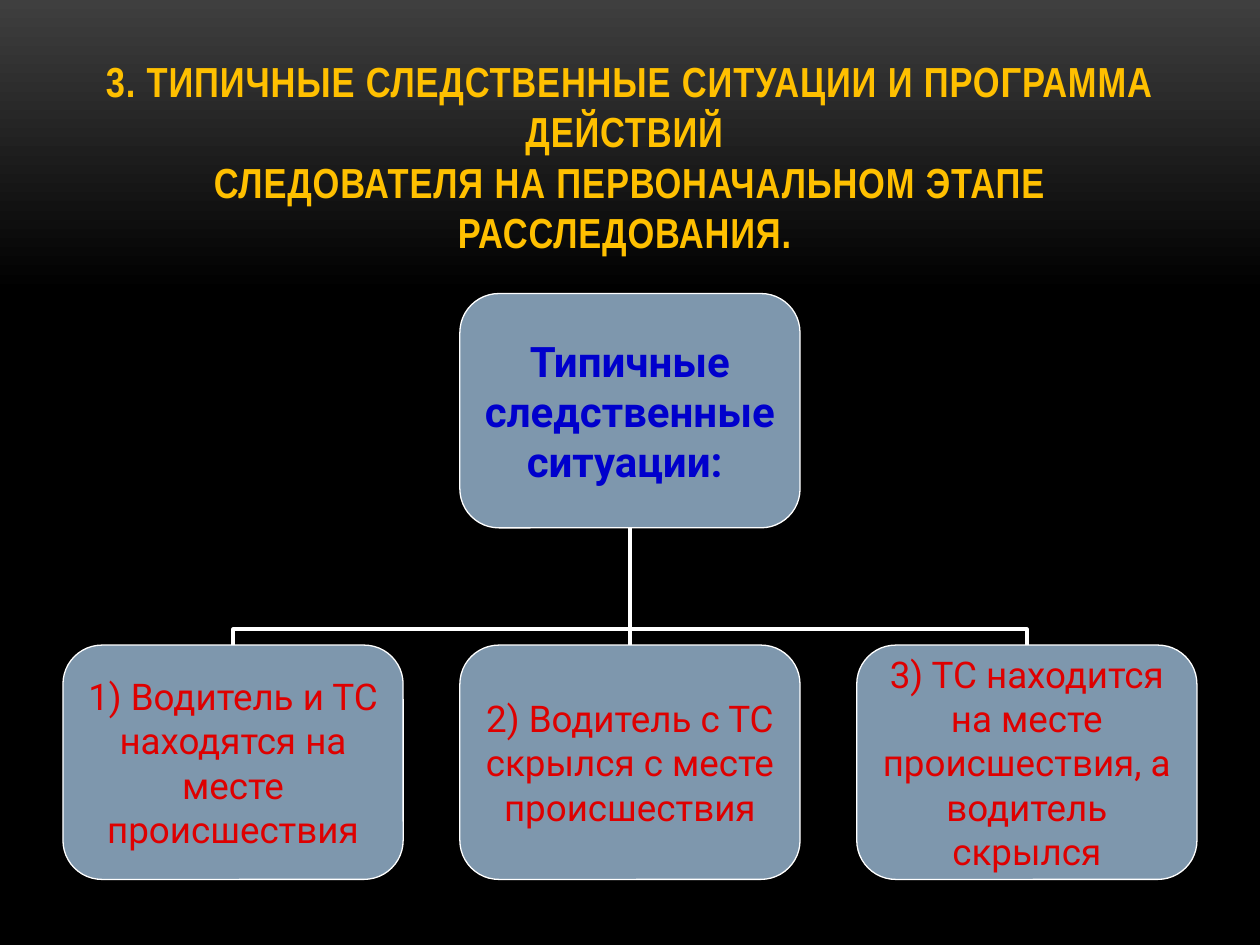
import copy

import pptx
import pptx.dml.color
import pptx.enum.shapes
import pptx.enum.text
import pptx.util
from pptx.oxml.ns import qn
from pptx.util import Inches

WHITE = "FFFFFF"
BOX_W, BOX_H = 2.7, 1.86
TITLE = ("3. ТИПИЧНЫЕ СЛЕДСТВЕННЫЕ СИТУАЦИИ И ПРОГРАММА ДЕЙСТВИЙ \v"
         "СЛЕДОВАТЕЛЯ НА ПЕРВОНАЧАЛЬНОМ ЭТАПЕ РАССЛЕДОВАНИЯ. ")
HEADING = "Типичные следственные ситуации: "
SITUATIONS = [
    "1) Водитель и ТС находятся на месте происшествия",
    "2) Водитель с ТС скрылся с месте происшествия",
    "3) ТС находится на месте происшествия, а водитель скрылся",
]


def rgb(value):
    return pptx.dml.color.RGBColor.from_string(value)


def paint_background(slide):
    fill = slide.background.fill
    fill.gradient()
    fill.gradient_angle = 270
    for stop, (position, color) in zip(fill.gradient_stops, [(0, "3F3F3F"), (0.31, "000000")]):
        stop.position = position
        stop.color.rgb = rgb(color)
    stops = next(slide.element.iter(qn("a:gsLst")))
    last = copy.deepcopy(stops[-1])
    last.set("pos", "100000")
    stops.append(last)


def write(shape, text, size, font, color, bold, anchor):
    frame = shape.text_frame
    frame.word_wrap = True
    frame.vertical_anchor = anchor
    frame.text = text
    paragraph = frame.paragraphs[0]
    paragraph.alignment = pptx.enum.text.PP_ALIGN.CENTER
    for run in paragraph.runs:
        run.font.size = pptx.util.Pt(size)
        run.font.name = font
        run.font.bold = bold
        run.font.color.rgb = rgb(color)
    return paragraph


def add_title(slide, left, top, width, height):
    title = slide.shapes.add_textbox(Inches(left), Inches(top), Inches(width), Inches(height))
    paragraph = write(title, TITLE, 24, "Arial Narrow", "FFC000", True,
                      pptx.enum.text.MSO_ANCHOR.BOTTOM)
    for run in paragraph.runs:
        run.font._element.set("spc", "50")


def add_box(slide, left, top, text, size, color, bold):
    box = slide.shapes.add_shape(pptx.enum.shapes.MSO_SHAPE.ROUNDED_RECTANGLE,
                                 Inches(left), Inches(top), Inches(BOX_W), Inches(BOX_H))
    box.shadow.inherit = False
    box.fill.solid()
    box.fill.fore_color.rgb = rgb("7E97AD")
    box.line.color.rgb = rgb(WHITE)
    box.line.width = pptx.util.Pt(0.75)
    frame = box.text_frame
    frame.margin_left = frame.margin_top = frame.margin_right = frame.margin_bottom = 0
    write(box, text, size, "Roboto", color, bold, pptx.enum.text.MSO_ANCHOR.MIDDLE)
    return box


def add_link(slide, kind, x1, y1, x2, y2):
    link = slide.shapes.add_connector(kind, Inches(x1), Inches(y1), Inches(x2), Inches(y2))
    link.line.color.rgb = rgb(WHITE)
    link.line.width = pptx.util.Pt(2.25)
    link._element.spPr.append(link._element.makeelement(qn("a:effectLst"), {}))
    return link


def add_branch(slide, child_x, child_y, parent_x, parent_y):
    """Elbow that leaves the child upwards: a horizontal elbow turned a quarter."""
    mid_x, mid_y = (child_x + parent_x) / 2, (child_y + parent_y) / 2
    half_w, half_h = (child_y - parent_y) / 2, abs(child_x - parent_x) / 2
    side = 1 if child_x > parent_x else -1
    link = add_link(slide, pptx.enum.shapes.MSO_CONNECTOR.ELBOW,
                    mid_x + side * half_w, mid_y - half_h,
                    mid_x - side * half_w, mid_y + half_h)
    properties = link._element.spPr
    properties.find(qn("a:xfrm")).set("rot", str((90 if side > 0 else 270) * 60000))
    geometry = properties.find(qn("a:prstGeom"))
    adjustments = geometry.find(qn("a:avLst"))
    if adjustments is None:
        adjustments = geometry.makeelement(qn("a:avLst"), {})
        geometry.append(adjustments)
    adjustments.append(adjustments.makeelement(
        qn("a:gd"), {"name": "adj1", "fmla": "val 13400"}))


def add_tree(slide, left, top, width, height):
    center = left + width / 2
    parent_bottom = top + BOX_H
    child_top = top + height - BOX_H
    step = (width - BOX_W) / (len(SITUATIONS) - 1)
    child_lefts = [left + i * step for i in range(len(SITUATIONS))]

    for child_left in (child_lefts[0], child_lefts[-1]):
        add_branch(slide, child_left + BOX_W / 2, child_top, center, parent_bottom)
    trunk = add_link(slide, pptx.enum.shapes.MSO_CONNECTOR.STRAIGHT,
                     center, child_top, center, parent_bottom)

    parent = add_box(slide, center - BOX_W / 2, top, HEADING, 24, "0000CC", True)
    children = [add_box(slide, child_left, child_top, text, 21, "DE0000", False)
                for child_left, text in zip(child_lefts, SITUATIONS)]
    trunk.begin_connect(children[1], 0)
    trunk.end_connect(parent, 2)


def main():
    presentation = pptx.Presentation()
    presentation.slide_width = Inches(10)
    presentation.slide_height = Inches(7.5)
    slide = presentation.slides.add_slide(presentation.slide_layouts[6])
    paint_background(slide)
    add_title(slide, 0.5, 0.52, 9, 1.57)
    add_tree(slide, 0.5, 2.33, 9, 4.65)
    presentation.save("out.pptx")


if __name__ == "__main__":
    main()
